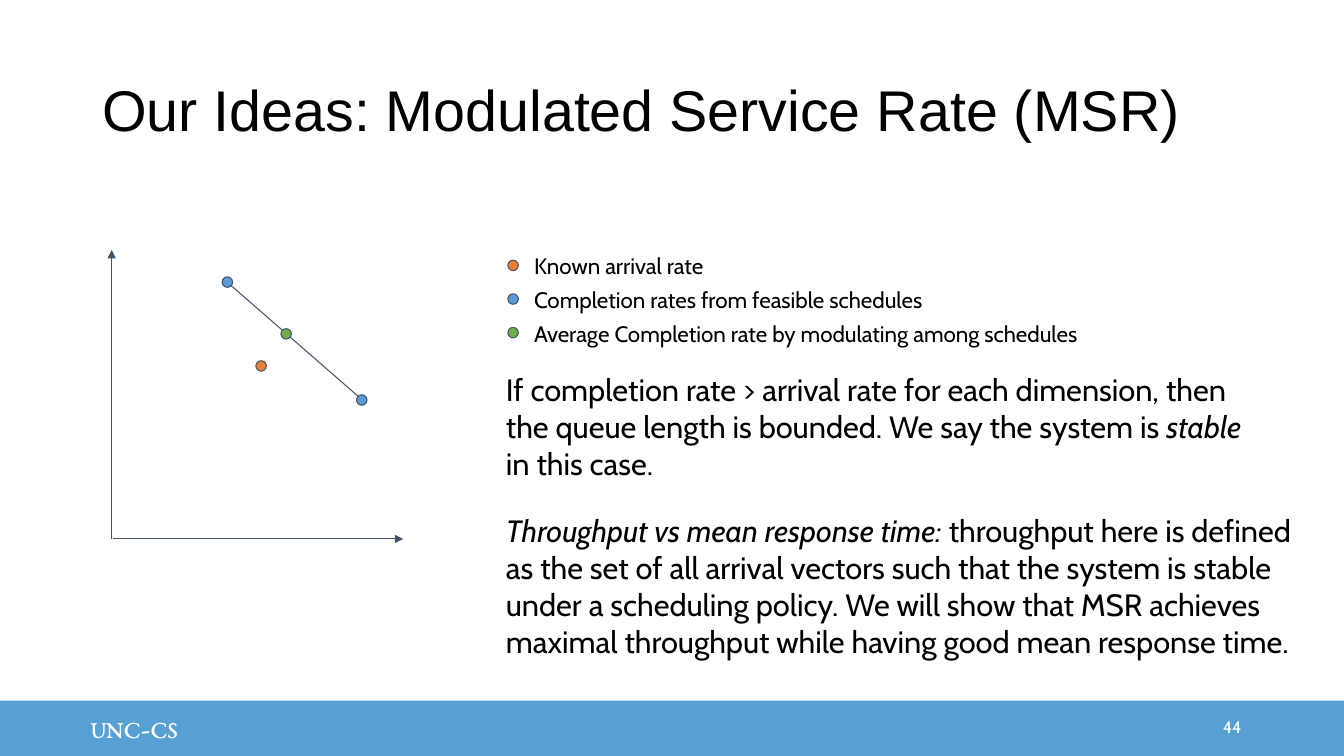
from dataclasses import dataclass

from lxml import etree
from pptx import Presentation
from pptx import util as u
from pptx.dml.color import RGBColor
from pptx.enum import shapes, text
from pptx.oxml.ns import qn


@dataclass(frozen=True)
class Theme:
    ink: str = "000000"
    white: str = "FFFFFF"
    band: str = "56A0D3"
    outline: str = "44546A"
    arrival: str = "ED7D31"
    completion: str = "5B9BD5"
    average: str = "70AD47"
    title_font: str = "Arial"
    body_font: str = "Cabin"
    brand_font: str = "EB Garamond"
    title: float = 41
    body: float = 22
    brand: float = 18
    label: float = 16
    number: float = 12
    hairline: float = 0.75
    dot: float = 7.5


class SlideBuilder:
    def __init__(self, slide, theme):
        self.slide = slide
        self.theme = theme

    def fill(self, shape, color):
        shape.shadow.inherit = False
        shape.fill.solid()
        shape.fill.fore_color.rgb = RGBColor.from_string(color)

    def outline(self, line):
        line.color.rgb = RGBColor.from_string(self.theme.outline)
        line.width = u.Pt(self.theme.hairline)

    def set_text(self, shape, runs, size, font, color, inset=(7.2, 7.2),
                 anchor=text.MSO_ANCHOR.TOP, align=text.PP_ALIGN.LEFT, spacing=None):
        frame = shape.text_frame
        frame.word_wrap = True
        frame.vertical_anchor = anchor
        frame.margin_left, frame.margin_right = u.Pt(inset[0]), u.Pt(7.2)
        frame.margin_top = frame.margin_bottom = u.Pt(inset[1])
        paragraph = frame.paragraphs[0]
        paragraph.alignment = align
        paragraph.line_spacing = spacing
        paragraph.font.size = u.Pt(size)
        paragraph.font.name = font
        paragraph.font.color.rgb = RGBColor.from_string(color)
        for words, italic in runs:
            run = paragraph.add_run()
            run.text = words
            if italic:
                run.font.italic = True

    def textbox(self, left, top, width, height, runs, size, font=None, color=None, **layout):
        box = self.slide.shapes.add_textbox(*map(u.Pt, (left, top, width, height)))
        self.set_text(box, runs, size, font or self.theme.body_font,
                      color or self.theme.ink, **layout)

    def band(self, left, top, width, height, words):
        band = self.slide.shapes.add_shape(
            shapes.MSO_SHAPE.RECTANGLE, *map(u.Pt, (left, top, width, height)))
        self.fill(band, self.theme.band)
        band.line.fill.background()
        self.set_text(band, [(words, False)], self.theme.brand, self.theme.brand_font,
                      self.theme.white, inset=(64.8, 3.6), anchor=text.MSO_ANCHOR.MIDDLE)

    def dot(self, x, y, color):
        size = self.theme.dot
        dot = self.slide.shapes.add_shape(
            shapes.MSO_SHAPE.OVAL, *map(u.Pt, (x - size / 2, y - size / 2, size, size)))
        self.fill(dot, color)
        self.outline(dot.line)

    def line(self, start, end, arrow=False):
        line = self.slide.shapes.add_connector(
            shapes.MSO_CONNECTOR.STRAIGHT, *map(u.Pt, (*start, *end)))
        self.outline(line.line)
        properties = line._element.spPr
        if arrow:
            etree.SubElement(properties.find(qn("a:ln")), qn("a:tailEnd"), type="triangle")
        etree.SubElement(properties, qn("a:effectLst"))


def main():
    theme = Theme()
    deck = Presentation()
    deck.slide_width, deck.slide_height = u.Pt(960), u.Pt(540)
    page = SlideBuilder(deck.slides.add_slide(deck.slide_layouts[6]), theme)

    page.band(0, 500.4, 960, 39.6, "UNC-CS")
    page.textbox(66, 28.8, 828, 104.4, [("Our Ideas: Modulated Service Rate (MSR)", False)],
                 theme.title, theme.title_font, anchor=text.MSO_ANCHOR.MIDDLE, spacing=0.9)
    page.textbox(786, 504.7, 108, 28.8, [("44", False)], theme.number, color=theme.white,
                 inset=(7.2, 3.6), anchor=text.MSO_ANCHOR.MIDDLE, align=text.PP_ALIGN.RIGHT)

    page.line((79.8, 385), (79.8, 178.6), arrow=True)
    page.line((80.6, 385), (288, 385), arrow=True)
    page.line((164.9, 203.8), (255.6, 282.9))
    rates = [
        (186.5, 261.4, theme.arrival),
        (162.4, 201.5, theme.completion),
        (258.4, 285.7, theme.completion),
        (204.4, 238.5, theme.average),
    ]
    for rate in rates:
        page.dot(*rate)

    legend = [
        ("Known arrival rate", theme.arrival, 150.5),
        ("Completion rates from feasible schedules", theme.completion, 293.8),
        ("Average Completion rate by modulating among schedules", theme.average, 486),
    ]
    for row, (label, color, width) in enumerate(legend):
        page.dot(366.5, 189.6 + 24 * row, color)
        page.textbox(374.4, 172.8 + 24.5 * row, width, 33.8, [(label, False)], theme.label)

    stability = [
        ("If completion rate > arrival rate for each dimension, then the queue length "
         "is bounded. We say the system is ", False),
        ("stable", True),
        (" in this case.", False),
    ]
    throughput = [
        ("Throughput vs mean response time: ", True),
        ("throughput here is defined as the set of all arrival vectors such that the "
         "system is stable under a scheduling policy. We will show that MSR achieves "
         "maximal throughput while having good mean response time.", False),
    ]
    page.textbox(354.3, 257.8, 550.8, 94.3, stability, theme.body)
    page.textbox(354.3, 358.6, 593.3, 121, throughput, theme.body)

    deck.save("out.pptx")


if __name__ == "__main__":
    main()
